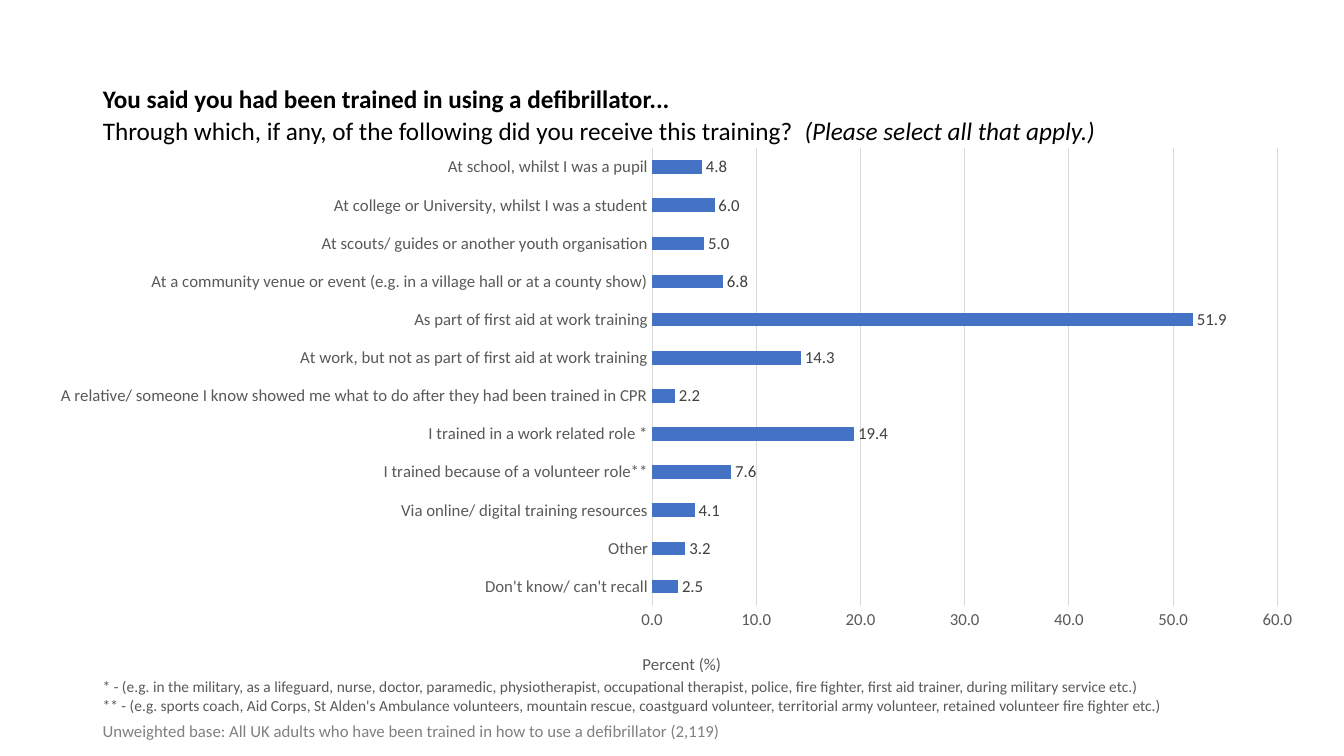
from lxml.etree import SubElement
from pptx import Presentation
from pptx.chart.data import CategoryChartData
from pptx.dml.color import RGBColor
from pptx.enum.chart import XL_CHART_TYPE, XL_LABEL_POSITION, XL_TICK_MARK
from pptx.enum.text import MSO_ANCHOR, MSO_AUTO_SIZE, PP_ALIGN
from pptx.oxml.ns import qn
from pptx.util import Inches, Pt

FONT = "Calibri"
COLORS = {
    "title": "000000",
    "bar": "4472C4",
    "grid": "D9D9D9",
    "axis": "595959",
    "value": "404040",
    "base": "808080",
}

presentation = Presentation()
presentation.slide_width = Inches(13.33)
presentation.slide_height = Inches(7.5)
slide = presentation.slides.add_slide(presentation.slide_layouts[5])

column = presentation.slide_width / 100
row = presentation.slide_height / 100
text_left = 6.9 * column


def style_font(font, size, color, bold=False, italic=False):
    font.name = FONT
    font.size = Pt(size)
    font.bold = bold
    font.italic = italic
    font.color.rgb = RGBColor.from_string(COLORS[color])


def set_layout(element, position, **shares):
    for old_layout in element.findall(qn("c:layout")):
        element.remove(old_layout)
    layout = element.makeelement(qn("c:layout"))
    element.insert(position, layout)
    manual = SubElement(layout, qn("c:manualLayout"))
    if "w" in shares:
        SubElement(manual, qn("c:layoutTarget")).set("val", "inner")
    for axis in ("x", "y"):
        SubElement(manual, qn(f"c:{axis}Mode")).set("val", "edge")
    for name, share in shares.items():
        SubElement(manual, qn(f"c:{name}")).set("val", str(share))


title = slide.shapes.title
title.left, title.top = int(text_left), int(5.33 * row)
title.width, title.height = int(86.27 * column), int(19.33 * row)
title.text_frame.auto_size = MSO_AUTO_SIZE.NONE
title.text_frame.vertical_anchor = MSO_ANCHOR.MIDDLE
title.text_frame.word_wrap = True
paragraph = title.text_frame.paragraphs[0]
paragraph.alignment = PP_ALIGN.LEFT
paragraph.line_spacing = 1.07
run = paragraph.add_run()
run.text = "You said you had been trained in using a defibrillator..."
style_font(run.font, 18, "title", bold=True)
paragraph.add_line_break()
for text, italic in [
    ("Through which, if any, of the following did you receive this training?\u00a0 ", False),
    ("(Please select all that apply.)", True),
]:
    run = paragraph.add_run()
    run.text = text
    style_font(run.font, 18, "title", italic=italic)

notes = [
    (94.67, 90.25, 4, 12, "base", [
        "Unweighted base: All UK adults who have been trained in how to use a defibrillator (2,119)",
    ]),
    (88.93, 89.42, 6.27, 11, "axis", [
        "* - (e.g. in the military, as a lifeguard, nurse, doctor, paramedic, physiotherapist, "
        "occupational therapist, police, fire fighter, first aid trainer, during military service etc.)",
        "** - (e.g. sports coach, Aid Corps, St Alden's Ambulance volunteers, mountain rescue, "
        "coastguard volunteer, territorial army volunteer, retained volunteer fire fighter etc.)",
    ]),
]
for top, width, height, size, color, lines in notes:
    box = slide.shapes.add_textbox(
        int(text_left), int(top * row), int(width * column), int(height * row))
    frame = box.text_frame
    frame.word_wrap = True
    for index, line in enumerate(lines):
        paragraph = frame.add_paragraph() if index else frame.paragraphs[0]
        run = paragraph.add_run()
        run.text = line
        style_font(run.font, size, color)

training_sources = [
    ("Don't know/ can't recall", 2.5),
    ("Other", 3.2),
    ("Via online/ digital training resources", 4.1),
    ("I trained because of a volunteer role**", 7.6),
    ("I trained in a work related role *", 19.4),
    ("A relative/ someone I know showed me what to do after they had been trained in CPR", 2.2),
    ("At work, but not as part of first aid at work training", 14.3),
    ("As part of first aid at work training", 51.9),
    ("At a community venue or event (e.g. in a village hall or at a county show)", 6.8),
    ("At scouts/ guides or another youth organisation", 5),
    ("At college or University, whilst I was a student", 6),
    ("At school, whilst I was a pupil", 4.8),
]
chart_data = CategoryChartData(number_format="0.0")
chart_data.categories = [source for source, percent in training_sources]
chart_data.add_series("Series 1", [percent for source, percent in training_sources])
chart = slide.shapes.add_chart(
    XL_CHART_TYPE.BAR_CLUSTERED,
    int(2.93 * column), int(18.13 * row), int(94.97 * column), int(72.93 * row),
    chart_data).chart
chart.has_legend = False
chart.has_title = False
style_font(chart.font, 12, "title")

plot = chart.plots[0]
plot.gap_width = 182
plot.vary_by_categories = False
bars = plot.series[0]
bars.format.fill.solid()
bars.format.fill.fore_color.rgb = RGBColor.from_string(COLORS["bar"])
plot.has_data_labels = True
labels = plot.data_labels
labels.show_value = True
labels.number_format = "0.0"
labels.number_format_is_linked = False
labels.position = XL_LABEL_POSITION.OUTSIDE_END
style_font(labels.font, 12, "value")

for axis in (chart.category_axis, chart.value_axis):
    axis.major_tick_mark = XL_TICK_MARK.NONE
    axis.minor_tick_mark = XL_TICK_MARK.NONE
    style_font(axis.tick_labels.font, 12, "axis")

percent_axis = chart.value_axis
percent_axis.minimum_scale = 0
percent_axis.maximum_scale = 60
percent_axis.major_unit = 10
percent_axis.tick_labels.number_format = "0.0"
percent_axis.tick_labels.number_format_is_linked = False
percent_axis.has_major_gridlines = True
for line in (chart.category_axis.format.line, percent_axis.major_gridlines.format.line):
    line.color.rgb = RGBColor.from_string(COLORS["grid"])
    line.width = Pt(0.75)
percent_axis.format.line.fill.background()

axis_title = percent_axis.axis_title
run = axis_title.text_frame.paragraphs[0].add_run()
run.text = "Percent (%)"
style_font(run.font, 12, "axis")

plot_area = chart.element.find(".//" + qn("c:plotArea"))
set_layout(plot_area, 0, x=0.48, y=0.02, w=0.49, h=0.83)
set_layout(plot_area.find(".//" + qn("c:title")), 1, x=0.47, y=0.93)

presentation.save("out.pptx")
